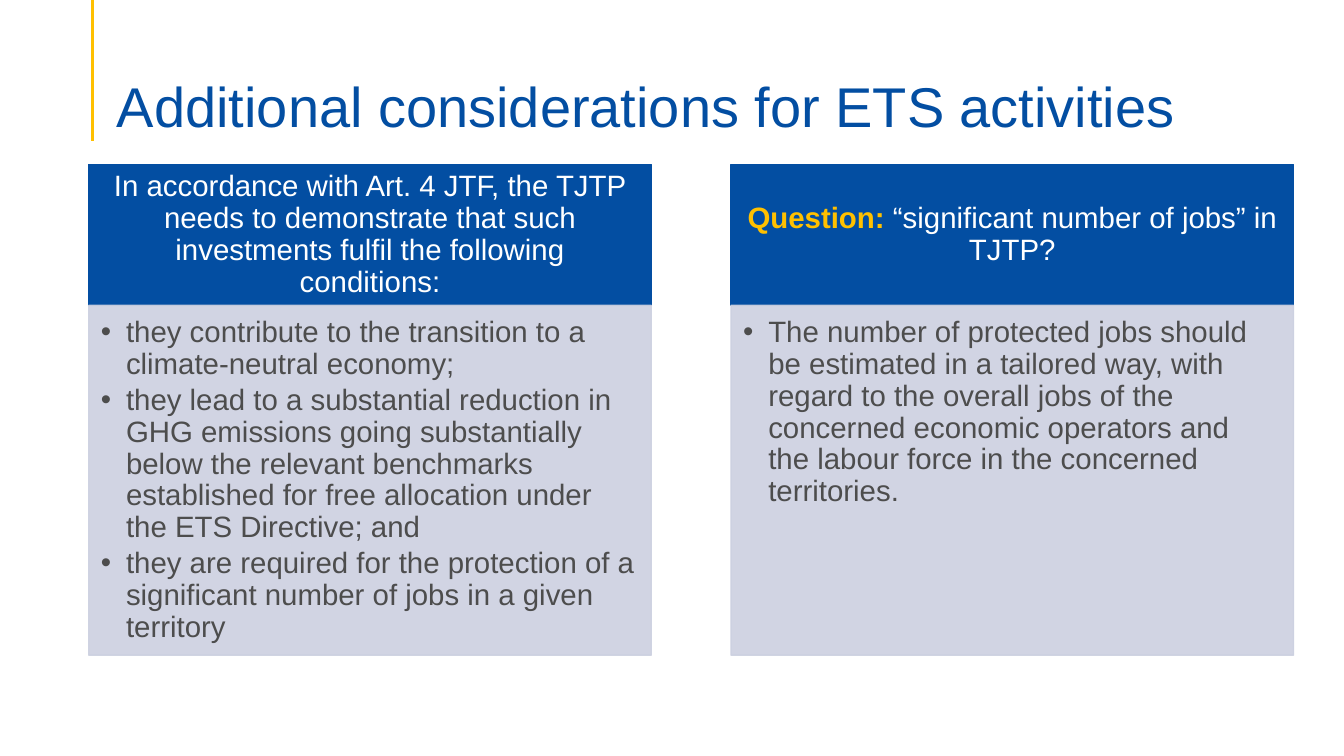
from lxml.etree import SubElement
from pptx import Presentation
from pptx.dml.color import RGBColor
from pptx.enum.shapes import MSO_CONNECTOR
from pptx.enum.text import MSO_ANCHOR, MSO_AUTO_SIZE, PP_ALIGN
from pptx.oxml.ns import qn
from pptx.util import Inches, Pt

BLUE, YELLOW, WHITE = "034EA2", "FFC000", "FFFFFF"
PALE, GREY = "CCD0E0", "4D4D4D"


def paint(target, color, opacity=100):
    target.solid()
    target.fore_color.rgb = RGBColor.from_string(color)
    if opacity < 100:
        swatch = target._xPr.find(f"{qn('a:solidFill')}/{qn('a:srgbClr')}")
        SubElement(swatch, qn("a:alpha"), val=str(opacity * 1000))


def arrange(box, position, insets, anchor):
    box.left, box.top, box.width, box.height = map(Inches, position)
    frame = box.text_frame
    frame.word_wrap = True
    frame.auto_size = MSO_AUTO_SIZE.NONE
    frame.vertical_anchor = anchor
    (frame.margin_left, frame.margin_top,
     frame.margin_right, frame.margin_bottom) = map(Inches, insets)
    return frame


columns = [
    (
        [("In accordance with Art. 4 JTF, the TJTP needs to demonstrate that such "
          "investments fulfil the following conditions:", WHITE, False)],
        ["they contribute to the transition to a climate-neutral economy;",
         "they lead to a substantial reduction in GHG emissions going substantially "
         "below the relevant benchmarks established for free allocation under the "
         "ETS Directive; and",
         "they are required for the protection of a significant number of jobs in a "
         "given territory"],
    ),
    (
        [("Question:", YELLOW, True),
         (" “significant number of jobs” in TJTP?", WHITE, False)],
        ["The number of protected jobs should be estimated in a tailored way, with "
         "regard to the overall jobs of the concerned economic operators and the "
         "labour force in the concerned territories."],
    ),
]

deck = Presentation()
deck.slide_width, deck.slide_height = Inches(13.33), Inches(7.5)
page = deck.slides.add_slide(deck.slide_layouts.get_by_name("Comparison"))
title, *boxes = page.placeholders

frame = arrange(title, (1.06, 0.53, 11.5, 0.86), (0.1, 0.05, 0.1, 0), MSO_ANCHOR.BOTTOM)
frame.text = "Additional considerations for ETS activities"
para = frame.paragraphs[0]
para.alignment = PP_ALIGN.LEFT
para.line_spacing = 0.9
para.font.name, para.font.size = "Arial", Pt(40)
para.font.color.rgb = RGBColor.from_string(BLUE)

accent = page.shapes.add_connector(
    MSO_CONNECTOR.STRAIGHT, Inches(0.92), 0, Inches(0.92), Inches(1.4))
paint(accent.line.fill, YELLOW)
accent.line.width = Pt(2.25)
SubElement(accent._element.spPr, qn("a:effectLst"))

for number, (heading_spans, points) in enumerate(columns):
    left = 0.88 + 6.37 * number
    heading, body = boxes[2 * number:2 * number + 2]

    frame = arrange(heading, (left, 1.63, 5.58, 1.4),
                    (0.16, 0.09, 0.16, 0.09), MSO_ANCHOR.MIDDLE)
    para = frame.paragraphs[0]
    para.alignment = PP_ALIGN.CENTER
    for text, color, bold in heading_spans:
        span = para.add_run()
        span.text = text
        span.font.bold = bold
        span.font.color.rgb = RGBColor.from_string(color)

    frame = arrange(body, (left, 3.03, 5.58, 3.47),
                    (0.12, 0.12, 0.16, 0.18), MSO_ANCHOR.TOP)
    frame.text = "\n".join(points)
    for para in frame.paragraphs:
        properties = para._p.get_or_add_pPr()
        properties.set("marL", str(Inches(0.25)))
        properties.set("indent", str(Inches(-0.25)))
        SubElement(properties, qn("a:buFont"), typeface="Arial")
        SubElement(properties, qn("a:buChar"), char="•")
        para.font.color.rgb = RGBColor.from_string(GREY)

    for box, color, opacity in [(heading, BLUE, 100), (body, PALE, 90)]:
        paint(box.fill, color, opacity)
        paint(box.line.fill, color, opacity)
        box.line.width = Pt(1)
        for para in box.text_frame.paragraphs:
            para.line_spacing = 0.9
            para.space_before, para.space_after = Pt(0), Pt(3)
            para.font.name, para.font.size = "Arial", Pt(21)

deck.save("out.pptx")
